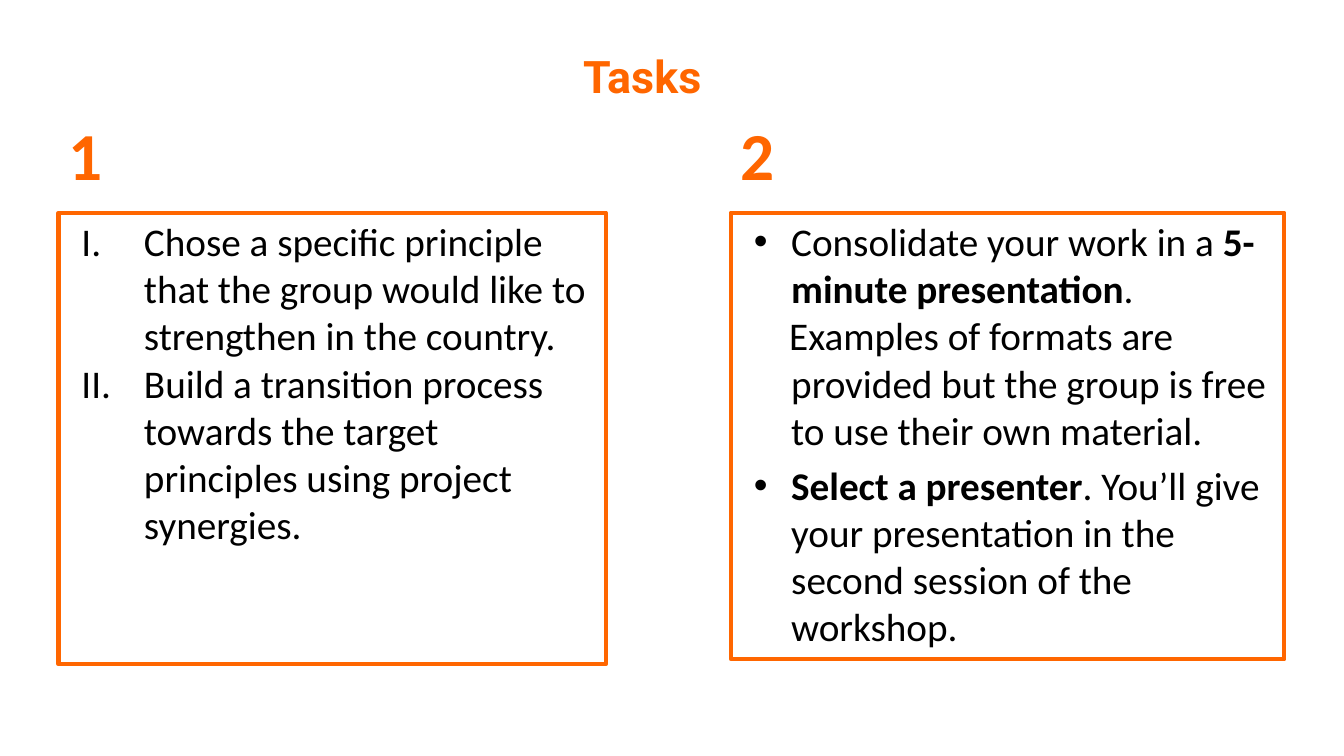
from dataclasses import dataclass

from lxml import etree
from pptx import Presentation
from pptx import util as u
from pptx.dml import color
from pptx.enum import shapes, text
from pptx.oxml import ns

WIDE, HIGH = u.Inches(13.33), u.Inches(7.5)
HUES = {"orange": "FF6600", "black": "000000"}


@dataclass(frozen=True)
class Run:
    words: str
    bold: bool = False


@dataclass(frozen=True)
class Item:
    runs: tuple[Run, ...]
    mark: str = ""
    hang: float = 0.37
    gap: int = 0


@dataclass(frozen=True)
class Task:
    label: str
    left: float
    width: float
    height: float
    margin: float
    tab: float
    items: tuple[Item, ...]


TASKS = (
    Task("1", 4.35, 40.73, 59.73, 0.75, 4.94, (
        Item((Run("Chose a specific principle that the group would like to "
                  "strengthen in the country."),), "roman", 0.62),
        Item((Run("Build a transition process towards the target principles "
                  "using project synergies."),), "roman", 0.62),
    )),
    Task("2", 54.38, 41.18, 59.07, 0.5, 0.12, (
        Item((Run("Consolidate your work in a "),
              Run("5-minute presentation", True), Run(".")), "dot"),
        Item((Run("Examples of formats are provided but the group is free "
                  "to use their own material."),), hang=0.02),
        Item((Run("Select a presenter", True),
              Run(". You’ll give your presentation in the second session "
                  "of the workshop.")), "dot", gap=6),
    )),
)


def place(left: float, top: float, width: float, height: float) -> tuple[int, ...]:
    return (int(WIDE * left / 100), int(HIGH * top / 100),
            int(WIDE * width / 100), int(HIGH * height / 100))


def tint(hue: str) -> color.RGBColor:
    return color.RGBColor.from_string(HUES[hue])


def write(para, run: Run, size: int, face: str, hue: str) -> None:
    piece = para.add_run()
    piece.text = run.words
    font = piece.font
    font.size, font.name, font.bold = u.Pt(size), face, run.bold
    font.color.rgb = tint(hue)


def label(slide, words: str, area: tuple[int, ...], size: int, face: str,
          align, anchor) -> None:
    frame = slide.shapes.add_textbox(*area).text_frame
    frame.word_wrap = True
    frame.vertical_anchor = anchor
    para = frame.paragraphs[0]
    para.alignment = align
    write(para, Run(words, True), size, face, "orange")


def indent(para, item: Item, task: Task) -> None:
    props = para._p.get_or_add_pPr()
    props.set("marL", str(u.Inches(task.margin)))
    props.set("indent", str(-u.Inches(item.hang)))

    def add(parent, tag: str, **attrs: str):
        return etree.SubElement(parent, ns.qn(tag), attrs)

    if item.mark == "roman":
        add(props, "a:buFont", typeface="+mj-lt")
        add(props, "a:buAutoNum", type="romanUcPeriod")
    elif item.mark == "dot":
        add(props, "a:buFont", typeface="Arial")
        add(props, "a:buChar", char="•")
    else:
        add(props, "a:buNone")
    tabs = add(props, "a:tabLst")
    add(tabs, "a:tab", pos=str(u.Inches(task.tab)), algn="l")


def panel(slide, task: Task) -> None:
    box = slide.shapes.add_shape(
        shapes.MSO_SHAPE.RECTANGLE,
        *place(task.left, 28.13, task.width, task.height))
    box.shadow.inherit = False
    box.fill.background()
    box.line.color.rgb = tint("orange")
    box.line.width = u.Pt(3)
    frame = box.text_frame
    frame.word_wrap = True
    frame.vertical_anchor = text.MSO_ANCHOR.TOP
    for index, item in enumerate(task.items):
        para = frame.add_paragraph() if index else frame.paragraphs[0]
        indent(para, item, task)
        para.alignment = text.PP_ALIGN.LEFT
        if item.gap:
            para.space_before = u.Pt(item.gap)
        for run in item.runs:
            write(para, run, 28, "Calibri", "black")


def main() -> None:
    deck = Presentation()
    deck.slide_width, deck.slide_height = WIDE, HIGH
    slide = deck.slides.add_slide(deck.slide_layouts[6])
    label(slide, "Tasks", place(2.63, 3.87, 90.32, 12.13), 32, "Roboto",
          text.PP_ALIGN.CENTER, text.MSO_ANCHOR.MIDDLE)
    for task in TASKS:
        panel(slide, task)
        label(slide, task.label, place(task.left, 14.27, 3.75, 12.13), 48,
              "Calibri", text.PP_ALIGN.LEFT, text.MSO_ANCHOR.TOP)
    deck.save("out.pptx")


if __name__ == "__main__":
    main()
